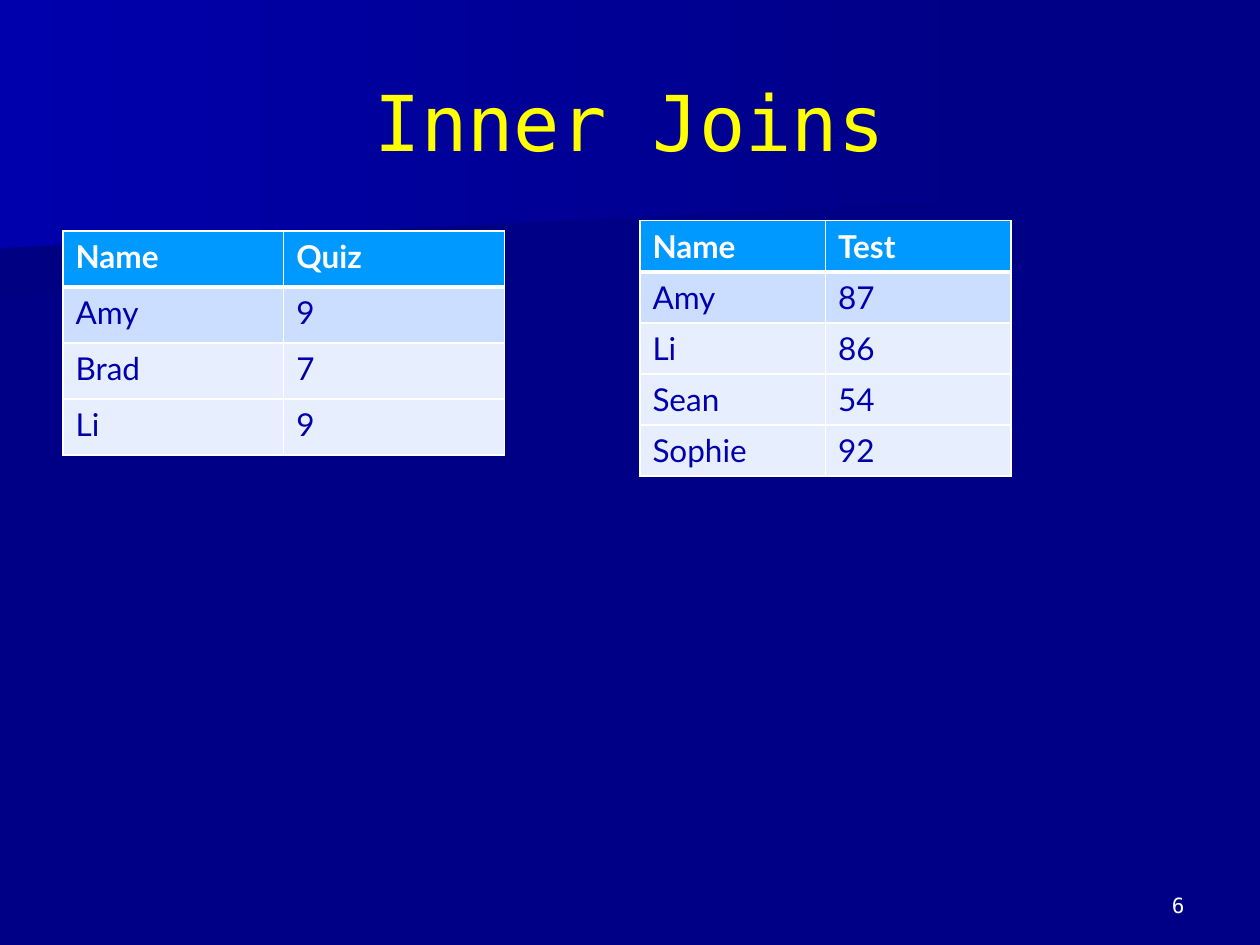
"""Build the Inner Joins slide with its two score tables."""
import lxml.etree
import pptx
import pptx.dml.color
import pptx.enum.text
import pptx.oxml.ns
import pptx.util

Cm = pptx.util.Cm
Align = pptx.enum.text.PP_ALIGN
Anchor = pptx.enum.text.MSO_ANCHOR
COLORS = {
    "background": "000086",
    "shade": "000083",
    "blue": "0000AC",
    "yellow": "FFFF00",
    "white": "FFFFFF",
    "header": "0099FF",
    "first": "CBDEFF",
    "row": "E7EFFF",
}
MONO = "DejaVu Sans Mono"


def rgb(name):
    return pptx.dml.color.RGBColor.from_string(COLORS[name])


def write(frame, text, size=18, font="Lato", color="blue", bold=False,
          align=Align.LEFT, anchor=Anchor.TOP):
    frame.word_wrap = True
    frame.vertical_anchor = anchor
    paragraph = frame.paragraphs[0]
    paragraph.alignment = align
    run = paragraph.add_run()
    run.text = text
    run.font.size = pptx.util.Pt(size)
    run.font.name = font
    run.font.bold = bold
    run.font.color.rgb = rgb(color)


presentation = pptx.Presentation()
presentation.slide_width, presentation.slide_height = Cm(25.4), Cm(19.05)
slide = presentation.slides.add_slide(presentation.slide_layouts[5])
slide.background.fill.solid()
slide.background.fill.fore_color.rgb = rgb("background")

bands = [
    ("shade", [(19.76, 3.89), (0, 5.51), (0, 2.57), (19.79, 2.57), (19.76, 3.25)]),
    ("blue", [(20.12, 4.11), (0, 5.28), (0, 0), (20.12, 0)]),
]
for start_color, points in bands:
    builder = slide.shapes.build_freeform(*points[0], scale=Cm(1))
    builder.add_line_segments(points[1:], close=True)
    band = builder.convert_to_shape()
    band.shadow.inherit = False
    band.line.fill.background()
    band.fill.gradient()
    band.fill.gradient_angle = 0
    for stop, color in zip(band.fill.gradient_stops, (start_color, "background")):
        stop.color.rgb = rgb(color)

title = slide.shapes.title
title.element.getparent().append(title.element)
title.left, title.top, title.width, title.height = Cm(1.27), Cm(0.84), Cm(22.86), Cm(3.18)
write(title.text_frame, "Inner Joins", size=44, font=MONO, color="yellow",
      align=Align.CENTER, anchor=Anchor.MIDDLE)

tables = [
    (12.9, 4.45, 3.74, 1.03,
     [("Name", "Test"), ("Amy", "87"), ("Li", "86"), ("Sean", "54"), ("Sophie", "92")]),
    (1.27, 4.66, 4.45, 1.13,
     [("Name", "Quiz"), ("Amy", "9"), ("Brad", "7"), ("Li", "9")]),
]
for left, top, column_width, row_height, records in tables:
    table = slide.shapes.add_table(
        len(records), 2, Cm(left), Cm(top),
        Cm(2 * column_width), Cm(row_height * len(records))).table
    table.horz_banding = False
    for column in table.columns:
        column.width = Cm(column_width)
    for row_index, record in enumerate(records):
        table.rows[row_index].height = Cm(row_height)
        is_header = row_index == 0
        fill_color = ("header", "first", "row")[min(row_index, 2)]
        edges = {"L": 1, "R": 1, "T": 3 if row_index == 1 else 1, "B": 3 if is_header else 1}
        for column_index, text in enumerate(record):
            cell = table.cell(row_index, column_index)
            write(cell.text_frame, text, bold=is_header,
                  color="white" if is_header else "blue")
            cell.fill.solid()
            cell.fill.fore_color.rgb = rgb(fill_color)
            properties = cell.fill._xPr
            for position, (side, width) in enumerate(edges.items()):
                border = lxml.etree.Element(
                    pptx.oxml.ns.qn(f"a:ln{side}"), w=str(pptx.util.Pt(width)))
                solid = lxml.etree.SubElement(border, pptx.oxml.ns.qn("a:solidFill"))
                lxml.etree.SubElement(
                    solid, pptx.oxml.ns.qn("a:srgbClr"), val=COLORS["white"])
                properties.insert(position, border)

number_box = slide.shapes.add_textbox(Cm(18.2), Cm(17.35), Cm(5.93), Cm(1.27))
write(number_box.text_frame, "6", size=12, font=MONO, color="white",
      align=Align.RIGHT, anchor=Anchor.BOTTOM)

presentation.save("out.pptx")
